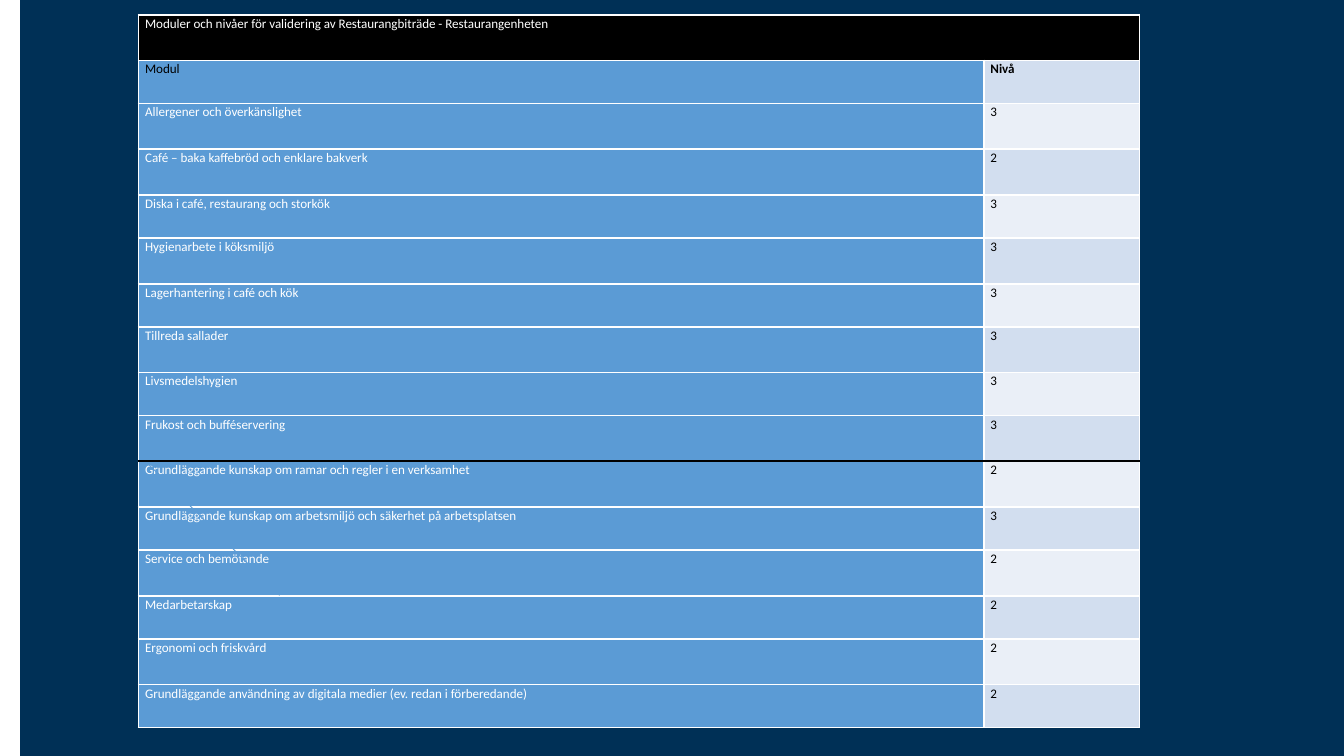
from pptx import Presentation
from pptx.dml.color import RGBColor
from pptx.enum.shapes import MSO_CONNECTOR, MSO_SHAPE
from pptx.oxml import parse_xml
from pptx.oxml.ns import nsdecls
from pptx.util import Inches, Pt

THEME = dict(navy="003056", blue="5B9BD5", dark="D2DEEF", light="EAEFF7",
             black="000000", white="FFFFFF", font="Calibri", size=7)

TITLE = "Moduler och nivåer för validering av Restaurangbiträde - Restaurangenheten"
ROWS = [
    ("Modul", "Nivå"),
    ("Allergener och överkänslighet", "3"),
    ("Café – baka kaffebröd och enklare bakverk", "2"),
    ("Diska i café, restaurang och storkök", "3"),
    ("Hygienarbete i köksmiljö", "3"),
    ("Lagerhantering i café och kök", "3"),
    ("Tillreda sallader", "3"),
    ("Livsmedelshygien", "3"),
    ("Frukost och bufféservering", "3"),
    ("Grundläggande kunskap om ramar och regler i en verksamhet", "2"),
    ("Grundläggande kunskap om arbetsmiljö och säkerhet på arbetsplatsen", "3"),
    ("Service och bemötande", "2"),
    ("Medarbetarskap", "2"),
    ("Ergonomi och friskvård", "2"),
    ("Grundläggande användning av digitala medier (ev. redan i förberedande)", "2"),
]
LOW = {1, 4, 6, 8, 11, 13, 15}  # slightly shorter rows
COLS = (6.29, 1.16)
LEFT, TOP = 1.03, 0.11


def color(key):
    return RGBColor.from_string(THEME[key])


def write(cell, text, fill, ink="black", bold=False):
    """Fill one table cell with formatted text and white borders."""
    cell.margin_left = cell.margin_right = Inches(0.05)
    cell.margin_top = cell.margin_bottom = 0
    para = cell.text_frame.paragraphs[0]
    para.line_spacing = 1.07
    run = para.add_run()
    run.text = text
    run.font.name, run.font.size = THEME["font"], Pt(THEME["size"])
    run.font.bold = bold
    run.font.color.rgb = color(ink)
    props = cell._tc.get_or_add_tcPr()
    for side in "LRTB":
        props.append(parse_xml(
            f'<a:ln{side} {nsdecls("a")} w="{Pt(1)}"><a:solidFill>'
            f'<a:srgbClr val="{THEME["white"]}"/></a:solidFill></a:ln{side}>'))
    cell.fill.solid()
    cell.fill.fore_color.rgb = color(fill)


# Widescreen slide, 16 to 9
deck = Presentation()
deck.slide_width = Inches(10)
deck.slide_height = deck.slide_width * 9 // 16
slide = deck.slides.add_slide(deck.slide_layouts[6])

# Navy panel
edge = Inches(0.15)
panel = slide.shapes.add_shape(MSO_SHAPE.RECTANGLE, edge, 0,
                               deck.slide_width - edge, deck.slide_height)
panel.shadow.inherit = False
panel.fill.solid()
panel.fill.fore_color.rgb = color("navy")
panel.line.fill.background()

# Table grid
count = len(ROWS) + 1
highs = [Pt(23.1) if i in LOW else Pt(24.5) for i in range(count)]
table = slide.shapes.add_table(count, 2, Inches(LEFT), Inches(TOP),
                               Inches(sum(COLS)), sum(highs)).table
for col, width in zip(table.columns, COLS):
    col.width = Inches(width)
for row, high in zip(table.rows, highs):
    row.height = high

# Heading and module rows
table.cell(0, 0).merge(table.cell(0, 1))
write(table.cell(0, 0), TITLE, "black", ink="white")
for i, (name, level) in enumerate(ROWS, 1):
    head = i == 1
    write(table.cell(i, 0), name, "blue", ink="black" if head else "white")
    write(table.cell(i, 1), level, "dark" if i % 2 else "light", bold=head)

# Thin diagonal and black divider
right, mid = LEFT + sum(COLS), 3.43
for x1, y1, x2, y2, key, width in (
        (1.08, mid, 2.08, mid + 1, "blue", 0.5),
        (right, mid, LEFT, mid, "black", 1.5)):
    line = slide.shapes.add_connector(MSO_CONNECTOR.STRAIGHT, Inches(x1),
                                      Inches(y1), Inches(x2), Inches(y2))
    line.line.color.rgb = color(key)
    line.line.width = Pt(width)
    line._element.spPr.append(parse_xml(f'<a:effectLst {nsdecls("a")}/>'))

deck.save("out.pptx")
